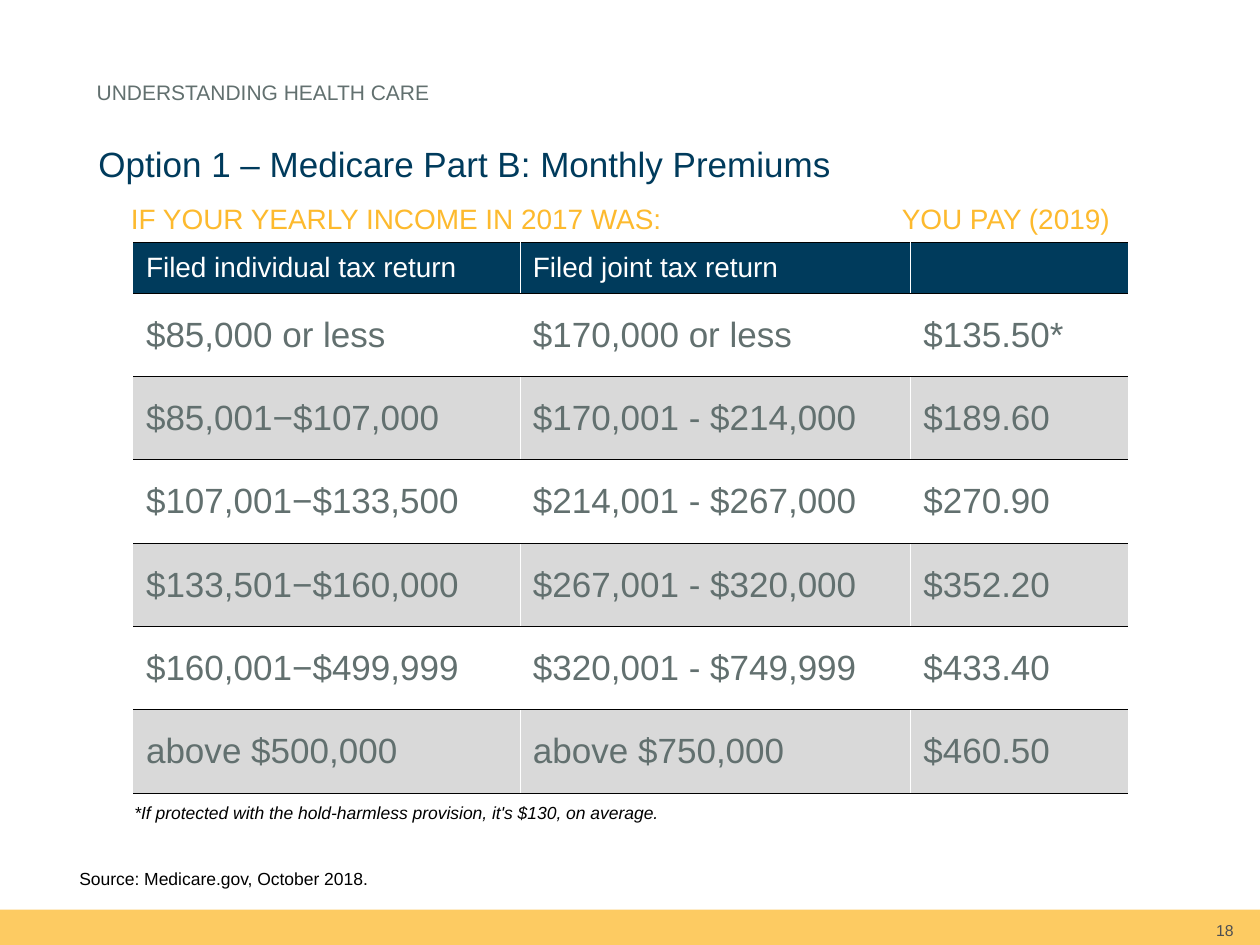
from lxml import etree
from pptx import Presentation
from pptx.dml.color import RGBColor
from pptx.enum.shapes import MSO_SHAPE
from pptx.enum.text import MSO_ANCHOR, MSO_AUTO_SIZE, PP_ALIGN
from pptx.oxml.ns import qn
from pptx.util import Cm, Pt

RECTANGLE = MSO_SHAPE.RECTANGLE
TOP, MIDDLE, BOTTOM = MSO_ANCHOR.TOP, MSO_ANCHOR.MIDDLE, MSO_ANCHOR.BOTTOM
LEFT, RIGHT = PP_ALIGN.LEFT, PP_ALIGN.RIGHT
NO_FIT = MSO_AUTO_SIZE.NONE

FONT = "Arial"
NAVY, GOLD, GRAY, SLATE = "003B5C", "FDBA2E", "62706F", "4D4F53"
BLACK, WHITE, BAND = "000000", "FFFFFF", "D9D9D9"

COLUMN_WIDTHS = (7.8, 7.87, 4.37)
HEADER_HEIGHT, ROW_HEIGHT = 1.02, 1.68
PREMIUMS = (
    ("Filed individual tax return", "Filed joint tax return", ""),
    ("$85,000 or less", "$170,000 or less", "$135.50*"),
    ("$85,001−$107,000", "$170,001 - $214,000", "$189.60"),
    ("$107,001−$133,500", "$214,001 - $267,000", "$270.90"),
    ("$133,501−$160,000", "$267,001 - $320,000", "$352.20"),
    ("$160,001−$499,999", "$320,001 - $749,999", "$433.40"),
    ("above $500,000", "above $750,000", "$460.50"),
)


def rgb(value):
    """Turn a hex string into a colour."""
    return RGBColor.from_string(value)


def write(frame, text, size, color, align=LEFT, italic=False):
    """Write one formatted run into the first paragraph of a frame."""
    paragraph = frame.paragraphs[0]
    paragraph.alignment = align
    run = paragraph.add_run()
    run.text = text
    run.font.name = FONT
    run.font.size = Pt(size)
    run.font.italic = italic
    run.font.color.rgb = rgb(color)


def add_label(slide, box, text, size, color, anchor=TOP, align=LEFT, italic=False):
    """Add a wrapping text box and return its frame."""
    frame = slide.shapes.add_textbox(*map(Cm, box)).text_frame
    frame.word_wrap = True
    frame.vertical_anchor = anchor
    write(frame, text, size, color, align, italic)
    return frame


def add_title(slide, text):
    """Place and format the title placeholder."""
    title = slide.shapes.title
    title.left, title.top, title.width, title.height = map(Cm, (1.73, 2.74, 22, 1.98))
    frame = title.text_frame
    frame.auto_size = NO_FIT
    frame.vertical_anchor = TOP
    write(frame, text, 20, NAVY)


def add_footer(slide, number):
    """Add the translucent footer bar with the page number."""
    bar = slide.shapes.add_shape(RECTANGLE, *map(Cm, (0, 18.34, 25.4, 0.71)))
    bar.shadow.inherit = False
    bar.line.fill.background()
    bar.fill.solid()
    bar.fill.fore_color.rgb = rgb(GOLD)
    color = bar.fill._xPr.find(".//" + qn("a:srgbClr"))
    etree.SubElement(color, qn("a:alpha"), val="75000")
    frame = add_label(slide, (18.95, 18.34, 5.92, 0.71), number, 9, SLATE, MIDDLE, RIGHT)
    frame.margin_right = frame.margin_bottom = 0


def add_border(cell, side, color):
    """Draw a thin line on one side of a cell, or none without a colour."""
    line = etree.SubElement(cell._tc.get_or_add_tcPr(), qn("a:ln" + side), w=str(Pt(0.5)))
    if color is None:
        etree.SubElement(line, qn("a:noFill"))
        return
    fill = etree.SubElement(line, qn("a:solidFill"))
    etree.SubElement(fill, qn("a:srgbClr"), val=color)


def format_cell(cell, text, row, column):
    """Write, border and fill one premium cell."""
    header = row == 0
    cell.vertical_anchor = MIDDLE
    if text:
        write(cell.text_frame, text, 16 if header else 20, WHITE if header else GRAY)
    last = len(COLUMN_WIDTHS) - 1
    add_border(cell, "L", WHITE if column else None)
    add_border(cell, "R", WHITE if column < last else None)
    add_border(cell, "T", BLACK)
    add_border(cell, "B", BLACK)
    cell.fill.solid()
    cell.fill.fore_color.rgb = rgb(NAVY if header else WHITE if row % 2 else BAND)


def add_premiums(slide):
    """Add the table of premiums by income."""
    height = HEADER_HEIGHT + ROW_HEIGHT * (len(PREMIUMS) - 1)
    table = slide.shapes.add_table(
        len(PREMIUMS), len(COLUMN_WIDTHS),
        Cm(2.69), Cm(4.89), Cm(sum(COLUMN_WIDTHS)), Cm(height),
    ).table
    table.horz_banding = False
    for column, width in zip(table.columns, COLUMN_WIDTHS):
        column.width = Cm(width)
    for r, texts in enumerate(PREMIUMS):
        table.rows[r].height = Cm(ROW_HEIGHT if r else HEADER_HEIGHT)
        for c, text in enumerate(texts):
            format_cell(table.cell(r, c), text, r, c)


def main():
    """Build the premiums slide."""
    deck = Presentation()
    deck.slide_width, deck.slide_height = Cm(25.4), Cm(19.05)
    slide = deck.slides.add_slide(deck.slide_layouts[5])
    add_footer(slide, "18")
    section = add_label(slide, (1.7, 0.64, 22, 1.47), "UNDERSTANDING HEALTH CARE", 12, GRAY, BOTTOM)
    section.margin_bottom = 0
    add_title(slide, "Option 1 – Medicare Part B: Monthly Premiums")
    add_label(slide, (1.35, 17.37, 23.6, 0.69), "Source: Medicare.gov, October 2018.", 10, BLACK)
    add_label(slide, (2.39, 3.94, 12.47, 0.94), "IF YOUR YEARLY INCOME IN 2017 WAS:", 16, GOLD)
    add_label(slide, (17.93, 3.94, 5.11, 0.94), "YOU PAY (2019)", 16, GOLD)
    add_label(
        slide, (2.46, 16.05, 22.5, 0.69),
        "*If protected with the hold-harmless provision, it's $130, on average.",
        10, BLACK, italic=True,
    )
    add_premiums(slide)
    deck.save("out.pptx")


if __name__ == "__main__":
    main()
